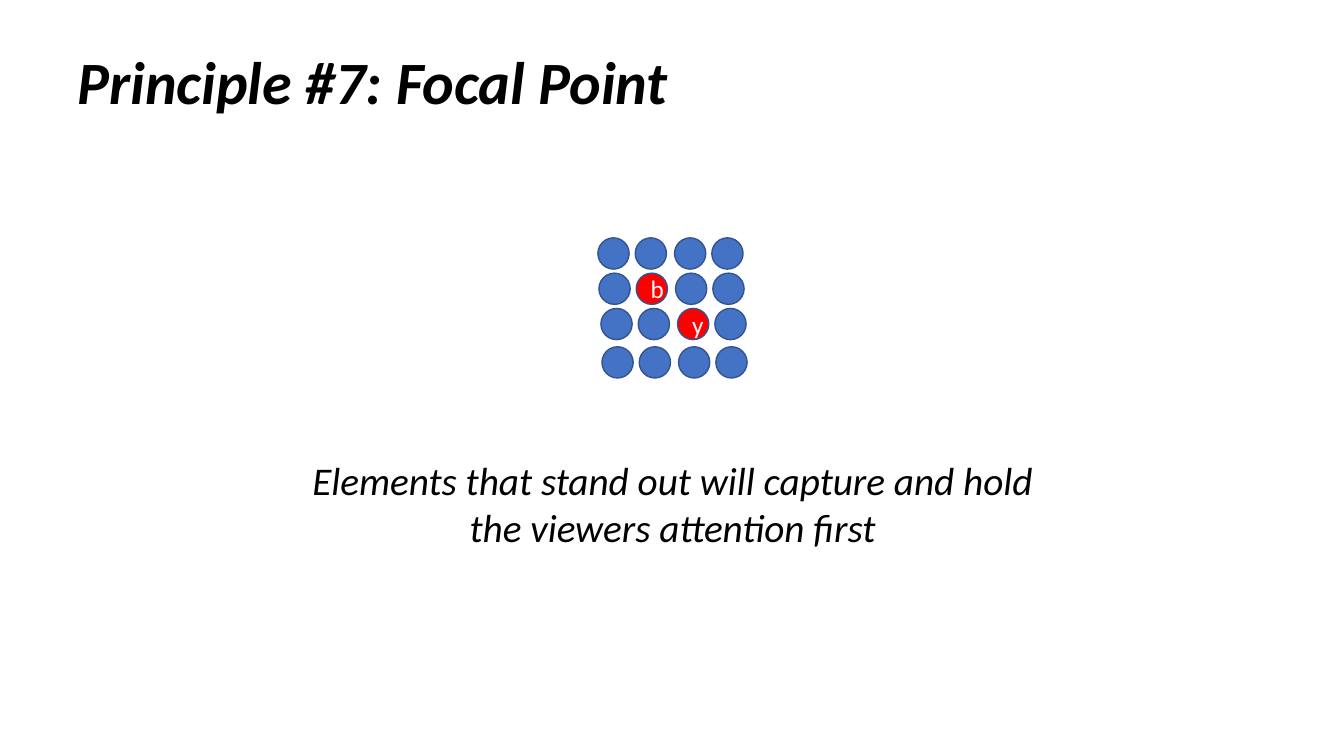
import pptx
import pptx.dml.color
import pptx.enum.shapes
import pptx.enum.text
import pptx.util
from pptx.util import Inches


def color(hex_value):
    return pptx.dml.color.RGBColor.from_string(hex_value)


def write(shape, text, size, hex_value, align, bold=False, italic=False):
    """Put one formatted paragraph into the shape and return it."""
    shape.text_frame.word_wrap = True
    paragraph = shape.text_frame.paragraphs[0]
    paragraph.text = text
    paragraph.alignment = align
    font = paragraph.runs[0].font
    font.name = "Calibri"
    font.size = pptx.util.Pt(size)
    font.bold = bold
    font.italic = italic
    font.color.rgb = color(hex_value)
    return paragraph


ALIGN = pptx.enum.text.PP_ALIGN
ANCHOR = pptx.enum.text.MSO_ANCHOR

prs = pptx.Presentation()
prs.slide_width = Inches(13.33)
prs.slide_height = Inches(7.5)
slide = prs.slides.add_slide(prs.slide_layouts[6])

title = slide.shapes.add_textbox(Inches(0.67), Inches(0.21), Inches(9.09), Inches(1))
title.text_frame.vertical_anchor = ANCHOR.BOTTOM
heading = write(title, "Principle #7: Focal Point", 42.9, "000000", ALIGN.LEFT,
                bold=True, italic=True)
heading.line_spacing = 0.9

# Dot grid: each row starts at its own point, columns keep the same offsets
row_starts = [(5.93, 2.36), (5.94, 2.71), (5.96, 3.06), (5.97, 3.44)]
column_offsets = [0, 0.37, 0.76, 1.13]
focal_letters = {(1, 1): "b", (2, 2): "y"}
diameter = Inches(0.31)

dots = slide.shapes.add_group_shape()
for row, (left, top) in enumerate(row_starts):
    for column, offset in enumerate(column_offsets):
        letter = focal_letters.get((row, column))
        dot = dots.shapes.add_shape(pptx.enum.shapes.MSO_SHAPE.OVAL,
                                    Inches(left + offset), Inches(top), diameter, diameter)
        dot.shadow.inherit = False
        dot.fill.solid()
        dot.fill.fore_color.rgb = color("FF0000" if letter else "4472C4")
        dot.line.color.rgb = color("325491")
        dot.line.width = pptx.util.Pt(1)
        if letter:
            dot.text_frame.vertical_anchor = ANCHOR.MIDDLE
            write(dot, letter, 18, "FFFFFF", ALIGN.CENTER)

explanation = slide.shapes.add_textbox(Inches(2.82), Inches(4.48), Inches(7.7), Inches(1.04))
explanation.text_frame.auto_size = pptx.enum.text.MSO_AUTO_SIZE.SHAPE_TO_FIT_TEXT
write(explanation, "Elements that stand out will capture and hold the viewers attention first",
      28, "000000", ALIGN.CENTER, italic=True)

prs.save("out.pptx")
